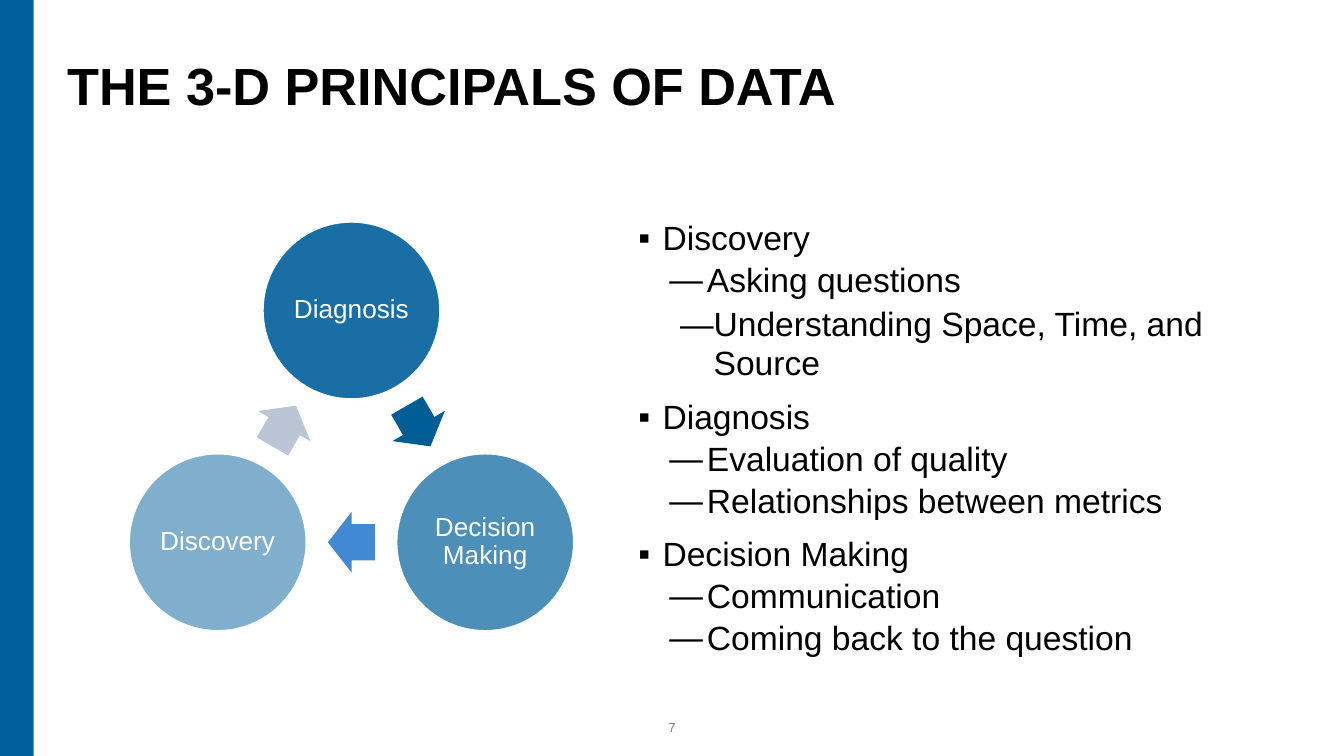
from dataclasses import dataclass
from math import cos, radians, sin

from lxml.etree import SubElement
from pptx import Presentation
from pptx.dml.color import RGBColor
from pptx.enum.shapes import MSO_SHAPE
from pptx.enum.text import MSO_ANCHOR, MSO_AUTO_SIZE, PP_ALIGN
from pptx.oxml.ns import qn
from pptx.util import Pt

PX = 4572  # 200 px to the inch
WIDE, HIGH = 2000, 1125


@dataclass(frozen=True)
class Theme:
    font: str = "Arial"
    ink: str = "000000"
    paper: str = "FFFFFF"
    blue: str = "00609C"
    gray: str = "808080"
    title: int = 28
    body: int = 18
    node: int = 14
    page: int = 7


@dataclass(frozen=True)
class Node:
    label: str
    alpha: int
    arrow: str


@dataclass(frozen=True)
class Level:
    mark: str
    left: int
    hang: int
    before: int
    lines: float = 0.9


THEME = Theme()
NODES = [
    Node("Diagnosis", 90, "005C95"),
    Node("Decision Making", 70, "4189D2"),
    Node("Discovery", 50, "BCC5D5"),
]
MID_X, MID_Y, RING, DISC = 523, 692, 230, 264
ARROW_W, ARROW_H = 70, 90

HEAD = Level("▪", 36, 36, 9)
ITEM = Level("—", 102, 56, 3)
LONG = Level("—", 112, 50, 3, 0.97)
POINTS = [
    (HEAD, "Discovery"),
    (ITEM, "Asking questions"),
    (LONG, "Understanding Space, Time, and Source"),
    (HEAD, "Diagnosis"),
    (ITEM, "Evaluation of quality"),
    (ITEM, "Relationships between metrics"),
    (HEAD, "Decision Making"),
    (ITEM, "Communication"),
    (ITEM, "Coming back to the question"),
]


def place(shape, x: int, y: int, w: int, h: int) -> None:
    shape.left, shape.top = x * PX, y * PX
    shape.width, shape.height = w * PX, h * PX


def set_frame(shape, anchor: MSO_ANCHOR, inset: int = 0):
    frame = shape.text_frame
    frame.word_wrap = True
    frame.auto_size = MSO_AUTO_SIZE.NONE
    frame.vertical_anchor = anchor
    frame.margin_left = frame.margin_right = inset * PX
    frame.margin_top = frame.margin_bottom = inset * PX
    return frame


def add_run(para, text: str, size: int, color: str, bold: bool = False) -> None:
    run = para.add_run()
    run.text = text
    run.font.name = THEME.font
    run.font.size = Pt(size)
    run.font.bold = bold
    run.font.color.rgb = RGBColor.from_string(color)


def add_solid(slide, kind: MSO_SHAPE, x: int, y: int, w: int, h: int, color: str):
    shape = slide.shapes.add_shape(kind, x * PX, y * PX, w * PX, h * PX)
    shape.shadow.inherit = False
    shape.fill.solid()
    shape.fill.fore_color.rgb = RGBColor.from_string(color)
    shape.line.fill.background()
    return shape


def add_title(slide, text: str) -> None:
    title = slide.shapes.title
    place(title, 100, 6, 1832, 168)
    para = set_frame(title, MSO_ANCHOR.BOTTOM).paragraphs[0]
    para.alignment = PP_ALIGN.LEFT
    para.line_spacing = 0.9
    add_run(para, text, THEME.title, THEME.ink, bold=True)


def add_node(slide, node: Node, x: int, y: int) -> None:
    disc = add_solid(slide, MSO_SHAPE.OVAL, x - DISC // 2, y - DISC // 2,
                     DISC, DISC, THEME.blue)
    tint = disc.fill._xPr.find(qn("a:solidFill"))[0]
    SubElement(tint, qn("a:alpha"), val=str(node.alpha * 1000))
    disc.line.color.rgb = RGBColor.from_string(THEME.paper)
    disc.line.width = Pt(1)
    para = set_frame(disc, MSO_ANCHOR.MIDDLE, 4).paragraphs[0]
    para.alignment = PP_ALIGN.CENTER
    para.line_spacing = 0.9
    add_run(para, node.label, THEME.node, THEME.paper)


def add_arrow(slide, x: int, y: int, turn: int, color: str) -> None:
    arrow = add_solid(slide, MSO_SHAPE.RIGHT_ARROW, x - ARROW_W // 2,
                      y - ARROW_H // 2, ARROW_W, ARROW_H, color)
    arrow.adjustments[0], arrow.adjustments[1] = 0.6, 0.5
    arrow.rotation = turn


def add_cycle(slide) -> None:
    """Set the nodes clockwise on a ring, with an arrow midway to the next."""
    step = 360 // len(NODES)

    def spot(angle: float, reach: float) -> tuple[int, int]:
        turn = radians(angle)
        return round(MID_X + reach * sin(turn)), round(MID_Y - reach * cos(turn))

    for i, node in enumerate(NODES):
        angle = i * step
        half = angle + step // 2
        add_node(slide, node, *spot(angle, RING))
        add_arrow(slide, *spot(half, RING * cos(radians(step / 2))),
                  half, node.arrow)


def add_point(para, level: Level, text: str, first: bool) -> None:
    props = para._p.get_or_add_pPr()
    props.set("marL", str(level.left * PX))
    props.set("indent", str(-level.hang * PX))
    SubElement(props, qn("a:buFont"), typeface=THEME.font)
    SubElement(props, qn("a:buChar"), char=level.mark)
    para.level = 0 if level is HEAD else 1
    para.line_spacing = level.lines
    if not first:
        para.space_before = Pt(level.before)
    add_run(para, text, THEME.body, THEME.ink)


def add_points(slide) -> None:
    box = slide.shapes.add_textbox(950 * PX, 330 * PX, 982 * PX, 704 * PX)
    frame = set_frame(box, MSO_ANCHOR.TOP)
    for i, (level, text) in enumerate(POINTS):
        para = frame.add_paragraph() if i else frame.paragraphs[0]
        add_point(para, level, text, i == 0)


def add_page(slide, number: str) -> None:
    box = slide.shapes.add_textbox(943 * PX, 1070 * PX, 114 * PX, 24 * PX)
    para = set_frame(box, MSO_ANCHOR.MIDDLE).paragraphs[0]
    para.alignment = PP_ALIGN.CENTER
    add_run(para, number, THEME.page, THEME.gray)


def main() -> None:
    deck = Presentation()
    deck.slide_width, deck.slide_height = WIDE * PX, HIGH * PX
    slide = deck.slides.add_slide(deck.slide_layouts[5])
    add_solid(slide, MSO_SHAPE.RECTANGLE, 0, 0, 50, HIGH, THEME.blue)
    add_title(slide, "THE 3-D PRINCIPALS OF DATA")
    add_cycle(slide)
    add_points(slide)
    add_page(slide, "7")
    deck.save("out.pptx")


if __name__ == "__main__":
    main()
